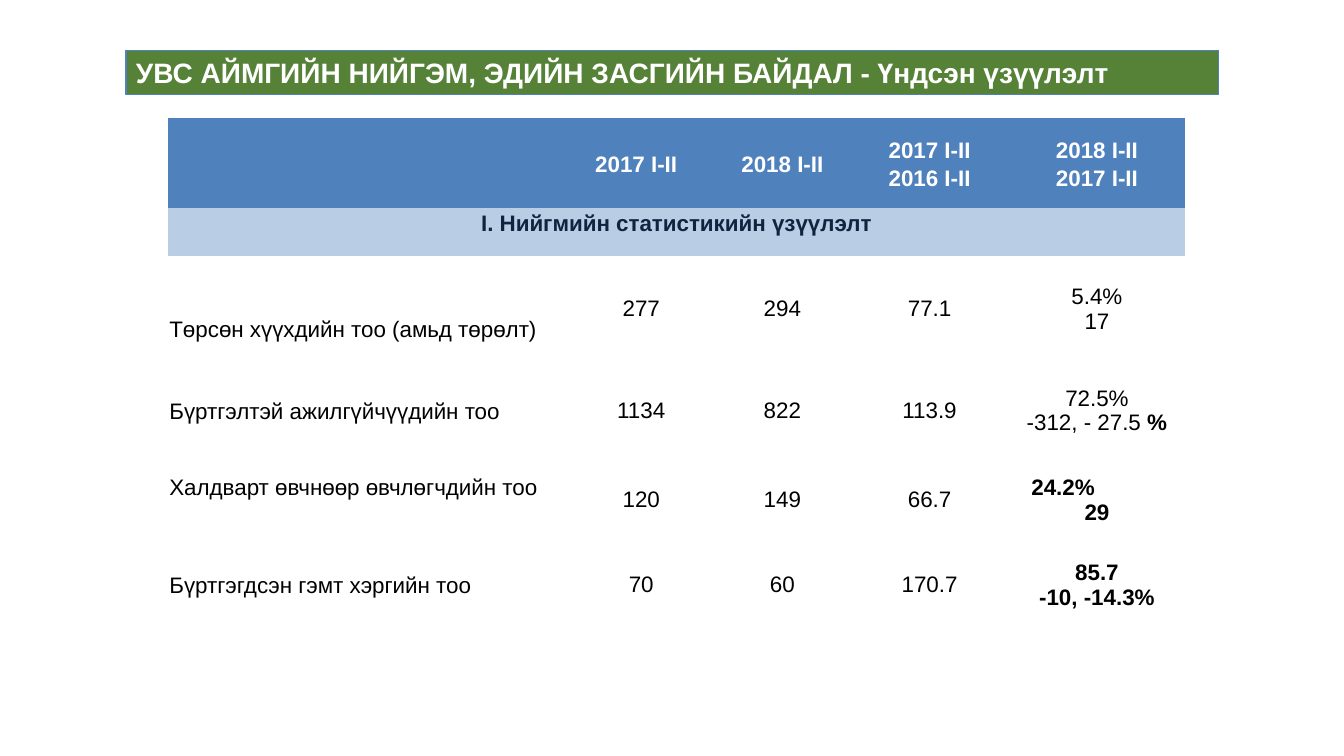
from pptx import Presentation
from pptx.dml.color import RGBColor
from pptx.enum.shapes import MSO_SHAPE
from pptx.enum.text import MSO_ANCHOR, PP_ALIGN
from pptx.util import Inches, Pt

COLORS = {
    "banner": "558237", "header": "4F81BD", "section": "B9CDE5",
    "white": "FFFFFF", "black": "000000", "navy": "0F243E",
}
FONT = "Arial"
NO_GRID_STYLE = "{2D5ABB26-0587-4C30-8999-92F81FD0307C}"

COLUMN_WIDTHS = [3.86, 0.1, 1.46, 1.34, 1.58, 1.74]
ROW_HEIGHTS = [0.89, 0.48, 1.05, 0.97, 0.8, 0.89]
VALUE_COLUMNS = [2, 3, 4, 5]

TITLE = "УВС АЙМГИЙН НИЙГЭМ, ЭДИЙН ЗАСГИЙН БАЙДАЛ - Үндсэн үзүүлэлт"
PERIODS = [["2017 I-II"], ["2018 I-II"],
           ["2017 I-II", "2016 I-II"], ["2018 I-II", "2017 I-II"]]
SECTION = "I. Нийгмийн статистикийн үзүүлэлт"
INDICATORS = [
    ("Төрсөн хүүхдийн тоо (амьд төрөлт)", "277", "294", "77.1", ["5.4%", "17"]),
    ("Бүртгэлтэй ажилгүйчүүдийн тоо", "1134", "822", "113.9", ["72.5%", "-312, - 27.5 "]),
    ("Халдварт өвчнөөр өвчлөгчдийн тоо", "120", "149", "66.7", ["24.2%", "29"]),
    ("Бүртгэгдсэн гэмт хэргийн тоо", "70", "60", "170.7", ["85.7", "-10, -14.3%"]),
]
BOLD_CHANGE_ROWS = (4, 5)


def rgb(name):
    return RGBColor.from_string(COLORS[name])


def style_paragraph(paragraph, size, color, bold, align):
    paragraph.alignment = align
    font = paragraph.font
    font.name, font.size, font.bold = FONT, Pt(size), bold
    font.color.rgb = rgb(color)


def fill_cell(cell, fill, lines=(), color="black", bold=False,
              align=PP_ALIGN.CENTER, spacing=1.0, side=0.01,
              anchor=MSO_ANCHOR.MIDDLE):
    """Colour a cell and write one paragraph per line."""
    cell.fill.solid()
    cell.fill.fore_color.rgb = rgb(fill)
    cell.vertical_anchor = anchor
    cell.margin_left = cell.margin_right = Inches(side)
    cell.margin_top = cell.margin_bottom = 0
    cell.text = "\n".join(lines)
    for paragraph in cell.text_frame.paragraphs:
        style_paragraph(paragraph, 16, color, bold, align)
        paragraph.line_spacing = spacing


def add_banner(slide):
    banner = slide.shapes.add_shape(MSO_SHAPE.RECTANGLE, Inches(1.25), Inches(0.5),
                                    Inches(10.84), Inches(0.44))
    banner.shadow.inherit = False
    banner.fill.solid()
    banner.fill.fore_color.rgb = rgb("banner")
    banner.line.color.rgb = rgb("header")
    banner.line.width = Pt(0.75)
    frame = banner.text_frame
    frame.word_wrap = True
    frame.vertical_anchor = MSO_ANCHOR.MIDDLE
    frame.text = TITLE
    style_paragraph(frame.paragraphs[0], 20, "white", True, PP_ALIGN.JUSTIFY)


def add_grid(slide):
    frame = slide.shapes.add_table(
        len(ROW_HEIGHTS), len(COLUMN_WIDTHS), Inches(1.67), Inches(1.17),
        Inches(sum(COLUMN_WIDTHS)), Inches(sum(ROW_HEIGHTS)))
    table = frame.table
    table.first_row = table.horz_banding = False
    table._tbl.tblPr[0].text = NO_GRID_STYLE
    for column, width in zip(table.columns, COLUMN_WIDTHS):
        column.width = Inches(width)
    for row, height in zip(table.rows, ROW_HEIGHTS):
        row.height = Inches(height)
    return table


def fill_header(table):
    table.cell(0, 1).merge(table.cell(0, 2))
    look = dict(color="white", bold=True, spacing=1.15, side=0.02)
    fill_cell(table.cell(0, 0), "header")
    for column, lines in zip([1, 3, 4, 5], PERIODS):
        fill_cell(table.cell(0, column), "header", lines, **look)


def fill_section(table):
    table.cell(1, 0).merge(table.cell(1, len(COLUMN_WIDTHS) - 1))
    fill_cell(table.cell(1, 0), "section", [SECTION], "navy", True,
              spacing=1.15, side=0.02, anchor=MSO_ANCHOR.TOP)


def fill_indicators(table):
    for row, (label, *values, change) in enumerate(INDICATORS, start=2):
        table.cell(row, 0).merge(table.cell(row, 1))
        fill_cell(table.cell(row, 0), "white", [label],
                  align=PP_ALIGN.LEFT, spacing=1.07)
        for column, lines in zip(VALUE_COLUMNS, [[v] for v in values] + [change]):
            bold = column == VALUE_COLUMNS[-1] and row in BOLD_CHANGE_ROWS
            fill_cell(table.cell(row, column), "white", lines, bold=bold)


def adjust_indicators(table):
    """Shift the off-centre labels and mark the bold percent sign."""
    births, infections = table.cell(2, 0), table.cell(4, 0)
    births.margin_top = Inches(0.39)
    infections.margin_bottom = Inches(0.26)

    percent = table.cell(3, 5).text_frame.paragraphs[1].add_run()
    percent.text = "%"
    percent.font.bold = True

    infection_growth = table.cell(4, 5).text_frame.paragraphs[0]
    infection_growth.alignment = PP_ALIGN.LEFT
    properties = infection_growth._p.get_or_add_pPr()
    properties.set("marL", str(Inches(0.21)))


def main():
    presentation = Presentation()
    presentation.slide_width = Inches(13.33)
    presentation.slide_height = Inches(7.5)
    slide = presentation.slides.add_slide(presentation.slide_layouts[6])
    add_banner(slide)
    table = add_grid(slide)
    fill_header(table)
    fill_section(table)
    fill_indicators(table)
    adjust_indicators(table)
    presentation.save("out.pptx")


if __name__ == "__main__":
    main()
